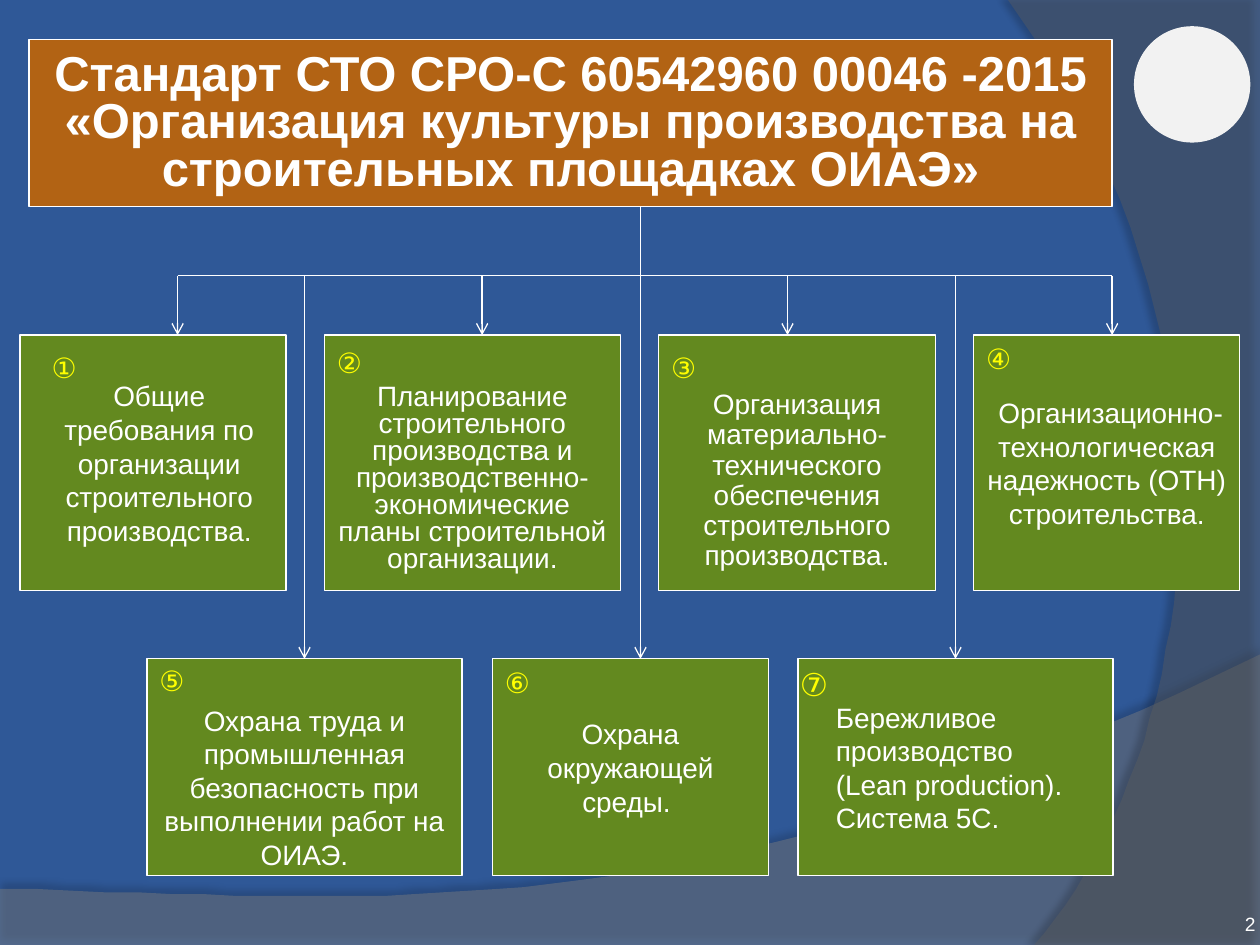
import pptx
import pptx.util
import pptx.dml.color
import pptx.enum.dml
import pptx.enum.shapes
import pptx.enum.text
import pptx.oxml
import pptx.oxml.ns

Pt = pptx.util.Pt
RGB = pptx.dml.color.RGBColor
SHAPE = pptx.enum.shapes.MSO_SHAPE
ALIGN = pptx.enum.text.PP_ALIGN
ANCHOR = pptx.enum.text.MSO_ANCHOR
qn = pptx.oxml.ns.qn
NS = pptx.oxml.ns.nsdecls("a")

BLUE = RGB(0x2F, 0x58, 0x97)
BROWN = RGB(0xB2, 0x63, 0x14)
GREEN = RGB(0x63, 0x89, 0x1F)
WHITE = RGB(0xFF, 0xFF, 0xFF)
YELLOW = RGB(0xFF, 0xFF, 0x00)
PALE = RGB(0xF2, 0xF2, 0xF2)
GREY = RGB(0x7F, 0x7F, 0x7F)
DARK_GREY = RGB(0x5E, 0x5E, 0x5E)

BUS_Y = 157.5
UPPER_TOP, UPPER_HEIGHT = 191.5, 146
LOWER_TOP, LOWER_HEIGHT = 376.5, 124


def style_paragraph(paragraph, size=16, color=WHITE, align=ALIGN.LEFT, bold=False):
    paragraph.alignment = align
    font = paragraph.font
    font.name, font.size, font.bold = "Arial", Pt(size), bold
    font.color.rgb = color


def paint(shape, fill):
    shape.fill.solid()
    shape.fill.fore_color.rgb = fill
    shape.line.color.rgb = WHITE
    shape.line.width = Pt(0.75)


def curve(start, control_1, control_2, end, steps=40):
    """Points along a cubic Bezier curve, after its start."""
    for step in range(1, steps + 1):
        t = step / steps
        u = 1 - t
        yield tuple(u**3 * a + 3 * u * u * t * b + 3 * u * t * t * c + t**3 * d
                    for a, b, c, d in zip(start, control_1, control_2, end))


def swoosh(slide, corners, bend, fill, alpha, shadow_alpha, shadow_angle):
    builder = slide.shapes.build_freeform(*corners[0], scale=Pt(1))
    builder.add_line_segments(corners[1:] + list(curve(corners[-1], *bend)))
    shape = builder.convert_to_shape()
    shape.fill.solid()
    shape.fill.fore_color.rgb = fill
    shape.line.fill.background()
    color = shape._element.spPr.find(qn("a:solidFill"))[0]
    color.append(pptx.oxml.parse_xml(f'<a:alpha {NS} val="{alpha * 1000}"/>'))
    shape._element.spPr.append(pptx.oxml.parse_xml(
        f'<a:effectLst {NS}><a:outerShdw blurRad="{Pt(4)}" dist="{Pt(4)}" '
        f'dir="{shadow_angle * 60000}" algn="ctr" rotWithShape="0">'
        f'<a:srgbClr val="000000"><a:alpha val="{shadow_alpha * 1000}"/></a:srgbClr>'
        '</a:outerShdw></a:effectLst>'))


def add_backdrop(slide, width, height):
    slide.background.fill.solid()
    slide.background.fill.fore_color.rgb = BLUE
    swoosh(slide, [(0, 507.5), (0, height), (width, height), (width, 374.5)],
           [(402.5, 525), (281.5, 517.5), (0, 507.5)], GREY, 45, 35, 270)
    swoosh(slide, [(width, 0), (width, height), (591, height)],
           [(673, 445.5), (733, 216), (576, 0)], DARK_GREY, 40, 45, 180)
    # Plain disc in the corner
    disc = slide.shapes.add_shape(SHAPE.OVAL, Pt(648), Pt(15), Pt(66.5), Pt(66.5))
    disc.shadow.inherit = False
    disc.fill.solid()
    disc.fill.fore_color.rgb = PALE
    disc.line.fill.background()


def add_title(slide, left, top, width, height):
    title = slide.shapes.title
    slide.shapes._spTree.append(title._element)  # in front of the backdrop
    title.left, title.top, title.width, title.height = map(Pt, (left, top, width, height))
    paint(title, BROWN)
    frame = title.text_frame
    frame.text = ("Стандарт СТО СРО-С 60542960 00046 -2015 "
                  "«Организация культуры производства на строительных площадках ОИАЭ»")
    frame.word_wrap = True
    frame.auto_size = pptx.enum.text.MSO_AUTO_SIZE.NONE
    frame.vertical_anchor = ANCHOR.TOP
    frame.margin_left = frame.margin_right = Pt(8.5)
    frame.margin_top = frame.margin_bottom = Pt(8.5)
    style_paragraph(frame.paragraphs[0], 28, align=ALIGN.CENTER, bold=True)
    frame.paragraphs[0].line_spacing = 0.8


def add_card(slide, left, top, width, height, topic, number=None,
             spacing=1.0, indent=0, align=ALIGN.CENTER):
    card = slide.shapes.add_shape(SHAPE.RECTANGLE, Pt(left), Pt(top), Pt(width), Pt(height))
    card.shadow.inherit = False
    paint(card, GREEN)
    frame = card.text_frame
    frame.word_wrap = True
    frame.vertical_anchor = ANCHOR.MIDDLE
    paragraph = frame.paragraphs[0]
    if number:
        paragraph.text = number
        paragraph.line_spacing = spacing
        style_paragraph(paragraph, color=YELLOW)
        paragraph = frame.add_paragraph()
        paragraph.space_before = Pt(3.5)
    paragraph.text = topic
    paragraph.line_spacing = spacing
    if indent:
        properties = paragraph._p.get_or_add_pPr()
        properties.set("marL", str(Pt(indent)))
        properties.set("indent", "0")
    style_paragraph(paragraph, align=align)
    return card


def add_number(slide, left, top, number, size=16):
    label = slide.shapes.add_textbox(Pt(left), Pt(top), Pt(31), Pt(size + 10.5))
    label.text_frame.word_wrap = False
    label.text_frame.text = number
    style_paragraph(label.text_frame.paragraphs[0], size, YELLOW)


def add_line(slide, x1, y1, x2, y2, arrow=True, target=None):
    line = slide.shapes.add_connector(pptx.enum.shapes.MSO_CONNECTOR.STRAIGHT,
                                      Pt(x1), Pt(y1), Pt(x2), Pt(y2))
    if target is not None:
        line.end_connect(target, 0)
    line.line.color.rgb = WHITE
    line.line.width = Pt(0.75)
    if arrow:
        line.line._get_or_add_ln().append(
            pptx.oxml.parse_xml(f'<a:tailEnd {NS} type="arrow"/>'))
    line._element.spPr.append(pptx.oxml.parse_xml(f"<a:effectLst {NS}/>"))


def add_upper_row(slide, top, height):
    add_card(slide, 11.5, top, 152, height,
             "Общие требования по организации строительного производства.", indent=7)
    add_card(slide, 185.5, top, 169, height,
             "Планирование строительного производства и "
             "производственно-экономические планы строительной организации.", "②", 0.8)
    add_card(slide, 376.5, top, 158, height,
             "Организация материально-технического обеспечения "
             "строительного производства.", "③", 0.9)
    add_card(slide, 556.5, top, 152, height,
             " Организационно-технологическая надежность (ОТН) строительства.")
    add_number(slide, 22.5, top + 5, "①")
    add_number(slide, 556.5, top, "④")


def add_lower_row(slide, top, height):
    safety = add_card(slide, 84, top, 180, height,
                      "Охрана труда и промышленная безопасность "
                      "при выполнении работ на ОИАЭ.", "⑤")
    add_card(slide, 281.5, top, 157.5, height, "Охрана окружающей среды. ")
    lean = add_card(slide, 456, top, 180, height,
                    "Бережливое производство\n(Lean production). Система 5С.",
                    indent=14.5, align=ALIGN.LEFT)
    add_number(slide, 281.5, top, "⑥")
    add_number(slide, 450, top, "⑦", 18)
    return safety, lean


def add_branches(slide, title_bottom, safety, lean):
    upper_xs = (101.5, 275.5, 450, 635.5)
    add_line(slide, upper_xs[0], BUS_Y, upper_xs[-1], BUS_Y, arrow=False)
    for x in upper_xs:
        add_line(slide, x, BUS_Y, x, UPPER_TOP)
    for x, target in ((174, safety), (546, lean)):
        add_line(slide, x, BUS_Y, x, LOWER_TOP, target=target)
    add_line(slide, 366, title_bottom, 366, LOWER_TOP)


def add_page_number(slide, left, top, width, height):
    page = slide.shapes.add_textbox(Pt(left), Pt(top), Pt(width), Pt(height))
    frame = page.text_frame
    frame.margin_left = frame.margin_right = frame.margin_top = frame.margin_bottom = 0
    frame.word_wrap = True
    frame.vertical_anchor = ANCHOR.BOTTOM
    frame.text = "2"
    style_paragraph(frame.paragraphs[0], 11, align=ALIGN.RIGHT)


def main():
    deck = pptx.Presentation()
    deck.slide_width, deck.slide_height = Pt(720), Pt(540)
    slide = deck.slides.add_slide(deck.slide_layouts[5])
    add_backdrop(slide, 720, 540)
    add_title(slide, 16.5, 22.5, 619, 95.5)
    add_upper_row(slide, UPPER_TOP, UPPER_HEIGHT)
    safety, lean = add_lower_row(slide, LOWER_TOP, LOWER_HEIGHT)
    add_branches(slide, 118, safety, lean)
    add_page_number(slide, 657.5, 505.5, 60, 29)
    deck.save("out.pptx")


if __name__ == "__main__":
    main()
